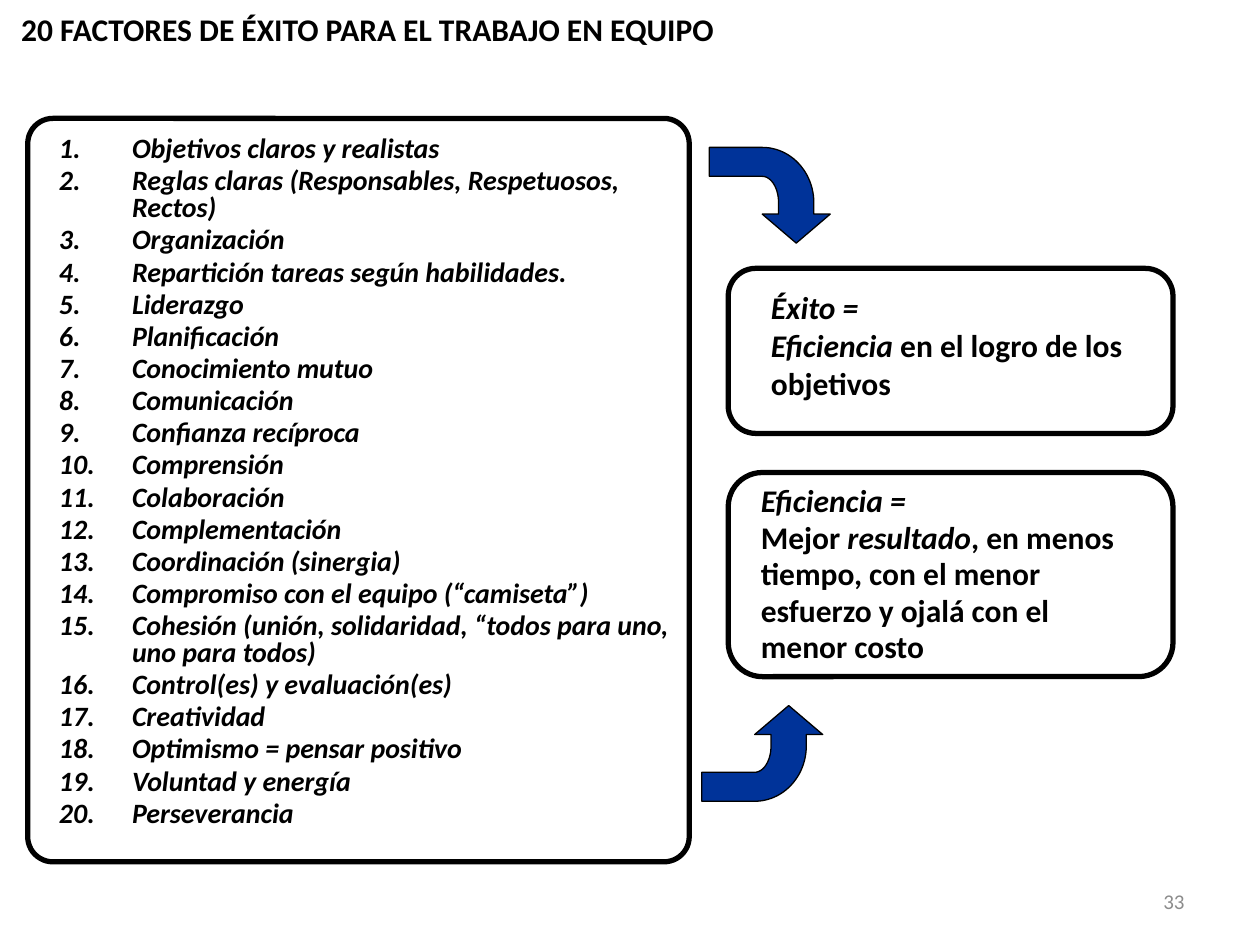
import math

import pptx
import pptx.dml.color
import pptx.enum.shapes
import pptx.enum.text
import pptx.util
from lxml import etree

W, H = 10, 7.5
FONT = "Calibri"
TITLE = "20 FACTORES DE ÉXITO PARA EL TRABAJO EN EQUIPO"
FACTORS = [
    "Objetivos claros y realistas",
    "Reglas claras (Responsables, Respetuosos, Rectos)",
    "Organización",
    "Repartición tareas según habilidades.",
    "Liderazgo",
    "Planificación",
    "Conocimiento mutuo",
    "Comunicación",
    "Confianza recíproca",
    "Comprensión",
    "Colaboración",
    "Complementación",
    "Coordinación (sinergia)",
    "Compromiso con el equipo (“camiseta”)",
    "Cohesión (unión, solidaridad, “todos para uno, uno para todos)",
    "Control(es) y evaluación(es)",
    "Creatividad",
    "Optimismo = pensar positivo",
    "Voluntad y energía",
    "Perseverancia",
]
SUCCESS = [[("Éxito =", True)],
           [("Eficiencia", True), (" en el logro de los objetivos", False)]]
EFFICIENCY = [[("Eficiencia =", True)],
              [("Mejor ", False), ("resultado", True), (", en menos", False)],
              [("tiempo, con el menor", False)],
              [("esfuerzo y ojalá con el", False)],
              [("menor costo", False)]]


def rgb(value):
    """Turn a hex string into a colour."""
    return pptx.dml.color.RGBColor.from_string(value)


def inches(*values):
    """Turn numbers of inches into lengths."""
    return [pptx.util.Inches(v) for v in values]


def paint(sp, fill, line, width):
    """Give a shape a flat fill and outline."""
    sp.shadow.inherit = False
    sp.fill.solid()
    sp.fill.fore_color.rgb = rgb(fill)
    sp.line.color.rgb = rgb(line)
    sp.line.width = pptx.util.Pt(width)


def add_text(s, box, paragraphs, size, bold=True, color="000000", spacing=None, before=0):
    """Add a wrapped text box of paragraphs, each a list of (text, italic) runs."""
    tf = s.shapes.add_textbox(*inches(*box)).text_frame
    tf.word_wrap = True
    for i, runs in enumerate(paragraphs):
        p = tf.add_paragraph() if i else tf.paragraphs[0]
        p.line_spacing = spacing
        p.space_before = pptx.util.Pt(before)
        for text, italic in runs:
            r = p.add_run()
            r.text = text
            r.font.name = FONT
            r.font.size = pptx.util.Pt(size)
            r.font.bold = bold
            r.font.italic = italic
            r.font.color.rgb = rgb(color)
    return tf


def add_panel(s, box, radius):
    """Add a white rounded panel with a heavy black outline."""
    sp = s.shapes.add_shape(pptx.enum.shapes.MSO_SHAPE.ROUNDED_RECTANGLE, *inches(*box))
    sp.adjustments[0] = radius
    paint(sp, "FFFFFF", "000000", 3)


def add_factors(s, box):
    """Add the panel with the numbered list of factors."""
    x, y, w, h = box
    add_panel(s, box, 0.038)
    tf = add_text(s, (x + 0.15, y + 0.1, w - 0.05, h), [[(f, True)] for f in FACTORS],
                  16, spacing=0.8, before=3)
    indent = pptx.util.Inches(0.58)
    for p in tf.paragraphs:
        pPr = p._p.get_or_add_pPr()
        pPr.set("marL", str(indent))
        pPr.set("indent", str(-indent))
        ns = pPr.nsmap["a"]
        etree.SubElement(pPr, f"{{{ns}}}buFont", typeface="+mj-lt")
        etree.SubElement(pPr, f"{{{ns}}}buAutoNum", type="arabicPeriod")


def add_definition(s, box, offset, paragraphs, **style):
    """Add a panel with a definition set at an offset inside it."""
    x, y, w, h = box
    dx, dy = offset
    add_panel(s, box, 0.167)
    add_text(s, (x + dx, y + dy, w - 0.16, h - dy), paragraphs, 18, **style)


def quarter(rx, ry, steps=24):
    """List points of a quarter ellipse from its right end to its top."""
    angles = [math.pi / 2 * i / steps for i in range(steps + 1)]
    return [(0.42 + rx * math.cos(a), 0.44 - ry * math.sin(a)) for a in angles]


def add_bent_arrow(s, box, upward=False):
    """Add an arrow that leaves to the right and bends down or up."""
    x, y, w, h = box
    head = [(0.42, 0.7), (0.69, 1 * h), (0.96, 0.7)]
    head = [(px, 0.53 if py == 0.7 else py) for px, py in head]
    points = (head + [(0.83, 0.53)] + quarter(0.41, 0.44) + [(0, 0), (0, 0.23)]
              + quarter(0.13, 0.21)[::-1] + [(0.55, 0.53)])
    points = [(x + px * w / 0.96, y + (h - py if upward else py)) for px, py in points]
    emu = [tuple(inches(*pt)) for pt in points]
    builder = s.shapes.build_freeform(*emu[0])
    builder.add_line_segments(emu[1:], close=True)
    paint(builder.convert_to_shape(), "003399", "000000", 0.75)


def add_page_number(s, box, number):
    """Add the grey page number at the right of its box."""
    tf = add_text(s, box, [[(number, False)]], 12, bold=False, color="8C8C8C")
    tf.vertical_anchor = pptx.enum.text.MSO_ANCHOR.MIDDLE
    tf.paragraphs[0].alignment = pptx.enum.text.PP_ALIGN.RIGHT


def main():
    """Build the slide and save it."""
    prs = pptx.Presentation()
    prs.slide_width, prs.slide_height = inches(W, H)
    s = prs.slides.add_slide(prs.slide_layouts[6])
    add_text(s, (0.07, 0.03, 7.37, 0.39), [[(TITLE, False)]], 18)
    add_definition(s, (5.78, 2.13, 3.53, 1.31), (0.24, 0.11), SUCCESS)
    add_definition(s, (5.78, 3.75, 3.53, 1.62), (0.16, 0.08), EFFICIENCY,
                   spacing=0.8, before=3.5)
    add_factors(s, (0.22, 0.94, 5.25, 5.9))
    add_bent_arrow(s, (5.63, 1.17, 0.96, 0.76))
    add_bent_arrow(s, (5.57, 5.6, 0.96, 0.76), upward=True)
    add_page_number(s, (7.17, 6.95, 2.33, 0.4), "33")
    prs.save("out.pptx")


if __name__ == "__main__":
    main()
